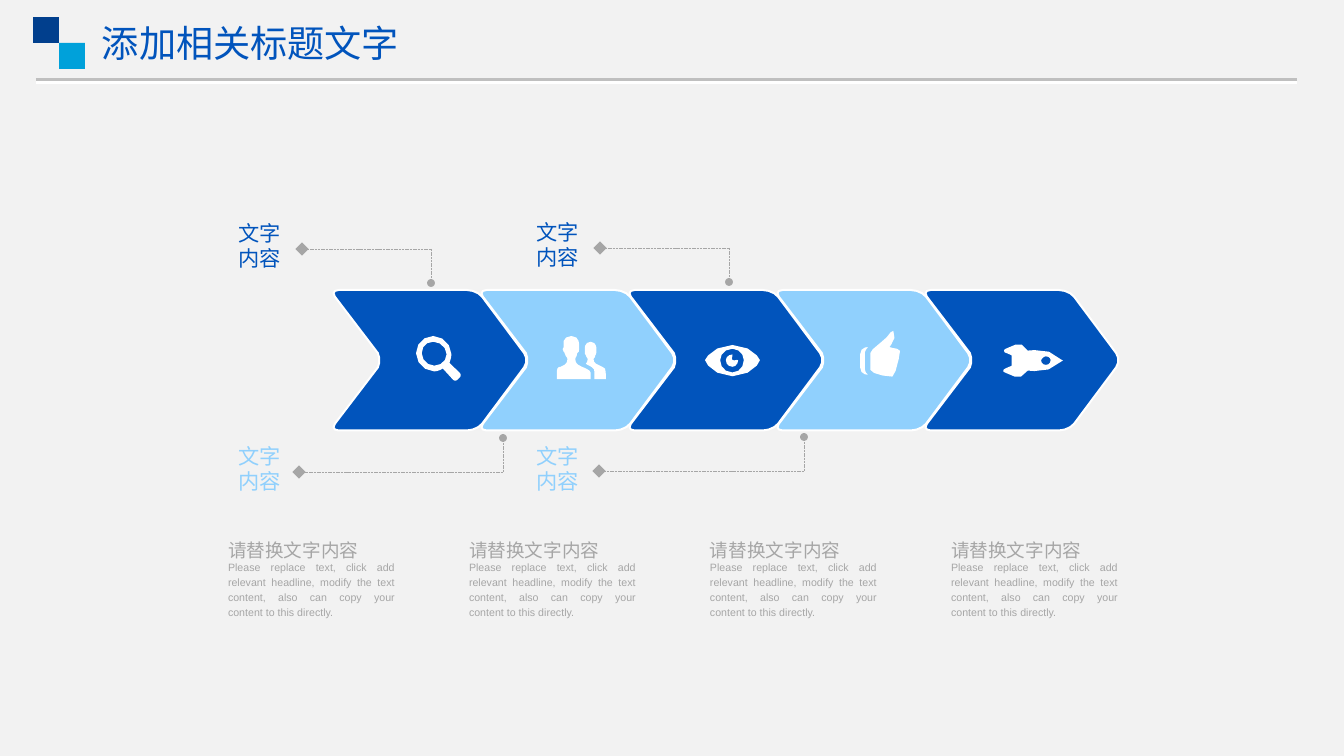
from lxml.etree import SubElement as Sub
from pptx import Presentation
from pptx.dml.color import RGBColor as Rgb
from pptx.enum.dml import MSO_LINE as Dash
from pptx.enum.shapes import MSO_CONNECTOR as Conn, MSO_SHAPE as Kind
from pptx.enum.text import MSO_AUTO_SIZE as Auto, PP_ALIGN as Align
from pptx.oxml.ns import qn
from pptx.util import Pt

PX = 9565
STEPS = 3
WIDE, HIGH = 1344, 756

PALE = Rgb(0xF2, 0xF2, 0xF2)
WHITE = Rgb(0xFF, 0xFF, 0xFF)
RULE = Rgb(0xBF, 0xBF, 0xBF)
GRAY = Rgb(0xA6, 0xA6, 0xA6)
NAVY = Rgb(0x01, 0x3F, 0x8D)
CYAN = Rgb(0x00, 0xA1, 0xDA)
BLUE = Rgb(0x01, 0x54, 0xBC)
SKY = Rgb(0x90, 0xD0, 0xFD)

ARROW = [[(157, 140), (154, 144, 147, 147, 141, 147), (7, 147), (2, 147, 0, 144, 3, 140),
          (48, 81), (50, 77, 50, 70, 48, 66), (3, 7), (0, 3, 2, 0, 7, 0),
          (141, 0), (147, 0, 154, 3, 157, 7), (201, 66), (204, 70, 204, 77, 201, 81)]]
LENS = [[(46, 39), (35, 28), (36, 25, 37, 22, 37, 19), (37, 9, 28, 0, 18, 0),
         (8, 0, 0, 8, 0, 18), (0, 28, 9, 37, 19, 37), (22, 37, 25, 36, 28, 34),
         (39, 46), (40, 47, 42, 47, 43, 46), (46, 43), (47, 42, 47, 40, 46, 39)],
        [(6, 18), (6, 11, 11, 6, 18, 6), (25, 6, 32, 12, 32, 19),
         (32, 26, 26, 31, 19, 31), (12, 31, 6, 25, 6, 18)]]
TEAM = [[(51, 45), (51, 45, 51, 35, 50, 34), (49, 33, 47, 32, 43, 30),
         (40, 29, 38, 27, 38, 24), (38, 23, 40, 23, 40, 20), (40, 19, 41, 20, 41, 17),
         (41, 12), (41, 11, 40, 6, 35, 6), (30, 6, 29, 11, 29, 12), (29, 17),
         (29, 20, 30, 19, 30, 20), (31, 23, 32, 23, 32, 24), (32, 26, 31, 28, 30, 29),
         (38, 33, 39, 34, 39, 37), (39, 45)],
        [(26, 32), (21, 30, 19, 28, 19, 24), (19, 22, 21, 22, 21, 18),
         (22, 16, 23, 18, 23, 14), (23, 8), (23, 6, 22, 0, 15, 0), (8, 0, 6, 6, 7, 8),
         (7, 12), (7, 12, 6, 12, 6, 14), (7, 18, 8, 16, 8, 18), (9, 22, 11, 22, 11, 24),
         (11, 28, 9, 30, 4, 32), (2, 32, 0, 33, 0, 36), (0, 45), (35, 45), (35, 38),
         (35, 36, 31, 34, 26, 32)]]
EYE = [[(29, 0), (10, 0, 0, 14, 0, 16), (0, 19, 10, 33, 29, 33),
        (48, 33, 58, 19, 58, 16), (58, 14, 48, 0, 29, 0)],
       [(29, 29), (21, 29, 16, 23, 16, 16), (16, 10, 21, 4, 29, 4),
        (36, 4, 41, 10, 41, 16), (41, 23, 36, 29, 29, 29)],
       [(29, 16), (27, 15, 30, 10, 29, 10), (25, 10, 22, 13, 22, 16),
        (22, 20, 25, 23, 29, 23), (32, 23, 35, 20, 35, 16), (35, 15, 30, 17, 29, 16)]]
THUMB = [[(31, 19), (31, 18, 40, 9, 35, 2), (33, 0, 29, 10, 22, 14),
          (19, 17, 11, 22, 11, 25), (11, 43), (11, 46, 24, 50, 34, 50),
          (37, 50, 42, 27, 42, 23), (42, 20, 31, 20, 31, 19)],
         [(8, 19), (6, 19, 0, 20, 0, 27), (0, 40), (0, 47, 6, 48, 8, 48),
          (10, 48, 5, 47, 5, 42), (5, 25), (5, 21, 10, 19, 8, 19)]]
ROCKET = [[(26, 29), (26, 29, 51, 33, 62, 19), (63, 18), (62, 18), (52, 4, 26, 8, 26, 8),
           (18, -2, 17, 0, 3, 6), (0, 7, 1, 9, 2, 10), (5, 11, 9, 13, 9, 13), (9, 24),
           (9, 24, 4, 26, 2, 27), (0, 28, -1, 30, 2, 31), (16, 37, 17, 39, 26, 29)],
          [(40, 18), (41, 16, 43, 14, 45, 14), (48, 14, 50, 16, 50, 18),
           (50, 21, 48, 23, 45, 23), (42, 23, 40, 21, 40, 18)]]

ICONS = [(THUMB, 528, 39, 40), (TEAM, 225, 46, 49), (LENS, 84, 46, 45),
         (ROCKET, 671, 53, 60), (EYE, 373, 55, 55)]
NOTES = [(233, 220, 302, 249, 431, 283, BLUE), (233, 443, 299, 472, 503, 438, SKY),
         (531, 219, 600, 248, 729, 282, BLUE), (531, 443, 599, 471, 804, 437, SKY)]
BODY = ("Please replace text, click add relevant headline, modify the text content, "
        "also can copy your content to this directly.")


def trace(path):
    """Turn lines and cubic curves into a list of points."""
    dots = [path[0]]
    for part in path[1:]:
        if len(part) == 2:
            dots.append(part)
            continue
        nodes = [dots[-1], part[:2], part[2:4], part[4:]]
        for step in range(1, STEPS + 1):
            t = step / STEPS
            mix = ((1 - t) ** 3, 3 * t * (1 - t) ** 2, 3 * t * t * (1 - t), t ** 3)
            dots.append(tuple(sum(m * n[axis] for m, n in zip(mix, nodes)) for axis in (0, 1)))
    return dots


def outline(page, paths, x, y, wide, fill, edge=None):
    """Draw closed paths, scaled to a width in px, at a point."""
    unit = wide * PX / max(n for path in paths for part in path for n in part[::2])
    pen = None
    for path in paths:
        dots = [(x * PX + a * unit, y * PX + b * unit) for a, b in trace(path)]
        if pen is None:
            pen = page.shapes.build_freeform(*dots[0], scale=1.0)
        else:
            pen.move_to(*dots[0])
        pen.add_line_segments(dots[1:], close=True)
    paint(pen.convert_to_shape(), fill, edge)


def paint(shape, fill, edge=None):
    """Set the fill and the edge of a shape and drop its shadow."""
    shape.shadow.inherit = False
    shape.fill.solid()
    shape.fill.fore_color.rgb = fill
    if edge is None:
        shape.line.fill.background()
    else:
        shape.line.color.rgb = edge
        shape.line.width = Pt(1.5)


def block(page, box, fill):
    """Draw a plain rectangle."""
    paint(page.shapes.add_shape(Kind.RECTANGLE, *(n * PX for n in box)), fill)


def write(page, words, box, size, color, font="Arial", align=Align.LEFT, space=None, pad=0):
    """Place one paragraph of text in a box."""
    frame = page.shapes.add_textbox(*(n * PX for n in box)).text_frame
    frame.word_wrap = True
    frame.auto_size = Auto.SHAPE_TO_FIT_TEXT
    frame.margin_left = frame.margin_right = pad * PX
    frame.margin_top = frame.margin_bottom = pad * PX // 2
    para = frame.paragraphs[0]
    para.alignment = align
    para.line_spacing = space
    run = para.add_run()
    run.text = words
    run.font.size = Pt(size)
    run.font.name = font
    run.font.color.rgb = color


def link(page, ends, color, width, dash=None, tip=None, size="med", glow=None):
    """Draw a straight line, with a tip at its far end and a shadow if asked."""
    wire = page.shapes.add_connector(Conn.STRAIGHT, *(n * PX for n in ends))
    wire.line.color.rgb = color
    wire.line.width = Pt(width)
    if dash:
        wire.line.dash_style = dash
    if tip:
        Sub(wire.line._get_or_add_ln(), qn("a:tailEnd"), type=tip, w=size, len=size)
    effect = Sub(wire._element.spPr, qn("a:effectLst"))
    if glow:
        shade = Sub(effect, qn("a:outerShdw"), dist=str(Pt(2)), dir="5400000", rotWithShape="0")
        Sub(shade, qn("a:srgbClr"), val=str(glow))


def header(page, x, y):
    """Draw the rule, the two squares and the title."""
    link(page, (x + 3, y + 63, x + 1264, y + 63), RULE, 2.25, glow=WHITE)
    side = 26
    for i, color in enumerate((NAVY, CYAN)):
        block(page, (x + i * side, y + i * side, side, side), color)
    write(page, "添加相关标题文字", (x + 60, y - 1, 346, 55), 28, BLUE,
          font="Noto Sans CJK SC", pad=9)


def chain(page, x, y):
    """Draw the row of arrows with an icon on each."""
    for i in range(len(ICONS)):
        outline(page, ARROW, x + 148 * i, y, 195, SKY if i % 2 else BLUE, WHITE)
    for paths, left, top, wide in ICONS:
        outline(page, paths, x + left, y + top, wide, WHITE)


def note(page, x, y, start, bend, end, tip, color):
    """Draw a label and its bent leader to an arrow."""
    link(page, (end, bend, end, tip), GRAY, 0.5, Dash.SQUARE_DOT, "oval")
    link(page, (end, bend, start, bend), GRAY, 0.5, Dash.SQUARE_DOT, "diamond", "lg")
    write(page, "文字内容", (x, y, 53, 52), 16, color, align=Align.CENTER)


def column(page, x, y):
    """Write a heading with its text below."""
    form = dict(color=GRAY, align=Align.JUSTIFY, space=1.2)
    write(page, "请替换文字内容", (x, y, 135, 27), 14, **form)
    write(page, BODY, (x, y + 24, 167, 60), 8, **form)


def main():
    """Build the slide and save it."""
    deck = Presentation()
    deck.slide_width, deck.slide_height = WIDE * PX, HIGH * PX
    page = deck.slides.add_slide(deck.slide_layouts[6])
    block(page, (0, 0, WIDE, HIGH), PALE)
    header(page, 33, 17)
    chain(page, 332, 290)
    for item in NOTES:
        note(page, *item)
    for i in range(4):
        column(page, 228 + 241 * i, 534)
    deck.save("out.pptx")


if __name__ == "__main__":
    main()
